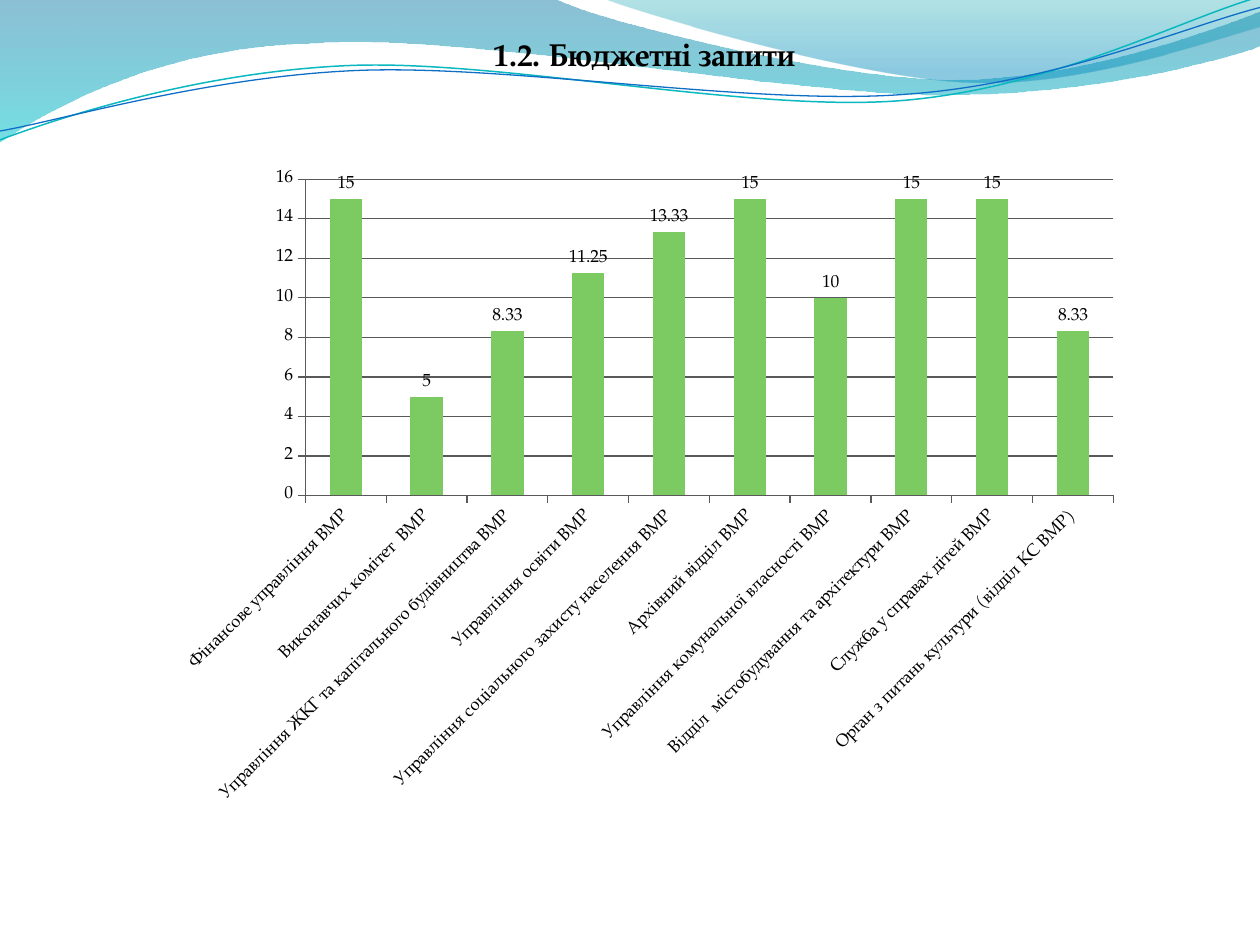
import math

from lxml import etree
from pptx import Presentation
from pptx import util as u
from pptx.chart import data as chart_data
from pptx.dml import color
from pptx.enum import chart as charts, text
from pptx.oxml import ns

FONT = "TeX Gyre Pagella"
RIBBON_TILT = 2.7

WAVES = [
    {"start": (0, 0), "stops": [(0, "0074A1", 45), (1, "00C6CF", 55)], "pieces": [
        [(4.4, -0.01)],
        [(4.76, 0.17), (6.64, 0.63), (7.58, 0.63)],
        [(8.53, 0.63), (9.58, 0.26), (10, 0.09)],
        [(10.01, 0.36)],
        [(9.83, 0.44), (8.7, 0.76), (7.46, 0.75)],
        [(6.22, 0.75), (3.82, 0.28), (2.57, 0.34)],
        [(1.29, 0.36), (0.46, 0.83), (-0.01, 1.13)],
        [(0, 0)]]},
    {"start": (4.79, -0.01), "stops": [(0, "00A1A9", 30), (0.8, "008BBF", 45)], "pieces": [
        [(5.09, 0.11), (6.82, 0.62), (7.69, 0.65)],
        [(8.56, 0.69), (9.61, 0.32), (10, 0.21)],
        [(10, 0)],
        [(4.79, -0.01)]]},
]
RIBBONS = [
    {"start": (0, 1.11), "center": (4.99, 0.58), "line": ("0AB8BF", 0.85), "pieces": [
        [(0.48, 0.93), (1.58, 0.57), (2.77, 0.52)],
        [(3.95, 0.47), (5.93, 0.89), (7.13, 0.8)],
        [(8.33, 0.71), (9.38, 0.15), (9.98, -0.02)]]},
    {"start": (0, 1.04), "center": (5, 0.59), "line": ("0F6FC6", 0.75), "pieces": [
        [(0.47, 0.96), (1.64, 0.61), (2.83, 0.56)],
        [(4.03, 0.51), (5.97, 0.84), (7.17, 0.75)],
        [(8.36, 0.67), (9.41, 0.21), (10, 0.06)]]},
]
REQUESTS = {
    "Фінансове управління ВМР": 15,
    "Виконавчих комітет  ВМР": 5,
    "Управління ЖКГ та капітального будівництва ВМР": 8.33,
    "Управління освіти ВМР": 11.25,
    "Управління соціального захисту населення ВМР": 13.33,
    "Архівний відділ ВМР": 15,
    "Управління комунальної власності ВМР": 10,
    "Відділ  містобудування та архітектури ВМР": 15,
    "Служба у справах дітей ВМР": 15,
    "Орган з питань культури (відділ КС ВМР)": 8.33,
}


def rgb(value):
    """Turn a hex string into a colour."""
    return color.RGBColor.from_string(value)


def apply(target, formats):
    """Set each format value on the target."""
    for name, value in formats.items():
        setattr(target, name, value)


def turn(point, center, degrees):
    """Turn a point clockwise about a center."""
    dx, dy = point[0] - center[0], point[1] - center[1]
    cos, sin = math.cos(math.radians(degrees)), math.sin(math.radians(degrees))
    return center[0] + dx * cos - dy * sin, center[1] + dx * sin + dy * cos


def add_outline(slide, box, start, pieces, close):
    """Draw a freeform of straight and cubic pieces measured from the box corner."""
    left, top = box[:2]
    points = [start] + [point for piece in pieces for point in piece]
    spots = [(u.Inches(left + x), u.Inches(top + y)) for x, y in points]
    builder = slide.shapes.build_freeform(*spots[0])
    builder.add_line_segments(spots[1:], close=close)
    outline = builder.convert_to_shape()
    outline.shadow.inherit = False
    segments = iter(list(outline._element.spPr.iter(ns.qn("a:lnTo"))))
    for piece in pieces:
        parts = [next(segments) for _ in piece]
        if len(parts) == 3:
            curve = etree.Element(ns.qn("a:cubicBezTo"))
            parts[0].addprevious(curve)
            for part in parts:
                curve.append(part[0])
                part.getparent().remove(part)
    return outline


def add_header(slide, box):
    """Place the two waves and the two ribbons in the box."""
    for wave in WAVES:
        shape = add_outline(slide, box, wave["start"], wave["pieces"], True)
        shape.line.fill.background()
        shape.fill.gradient()
        shape.fill.gradient_angle = 270
        for stop, (position, hue, _) in zip(shape.fill.gradient_stops, wave["stops"]):
            stop.position = position
            stop.color.rgb = rgb(hue)
        hues = shape._element.spPr.iter(ns.qn("a:srgbClr"))
        for hue, (_, _, opacity) in zip(hues, wave["stops"]):
            etree.SubElement(hue, ns.qn("a:alpha")).set("val", str(opacity * 1000))
    for ribbon in RIBBONS:
        center = ribbon["center"]
        pieces = [[turn(point, center, RIBBON_TILT) for point in piece]
                  for piece in ribbon["pieces"]]
        start = turn(ribbon["start"], center, RIBBON_TILT)
        shape = add_outline(slide, box, start, pieces, False)
        shape.rotation = 360 - RIBBON_TILT
        shape.fill.background()
        hue, width = ribbon["line"]
        shape.line.color.rgb = rgb(hue)
        shape.line.width = u.Pt(width)


def add_title(slide, box):
    """Place the centred heading in the box."""
    frame = slide.shapes.add_textbox(*map(u.Inches, box)).text_frame
    apply(frame, {"word_wrap": True, "auto_size": text.MSO_AUTO_SIZE.SHAPE_TO_FIT_TEXT})
    heading = frame.paragraphs[0]
    heading.alignment = text.PP_ALIGN.CENTER
    run = heading.add_run()
    run.text = "1.2. Бюджетні запити"
    apply(run.font, {"name": FONT, "size": u.Pt(18), "bold": True})
    run.font.color.rgb = rgb("000000")


def add_requests_chart(slide, box):
    """Place the column chart of budget requests in the box."""
    requests = chart_data.CategoryChartData()
    requests.categories = list(REQUESTS)
    requests.add_series("Series 1", list(REQUESTS.values()))
    chart = slide.shapes.add_chart(charts.XL_CHART_TYPE.COLUMN_CLUSTERED,
                                   *map(u.Inches, box), requests).chart
    apply(chart, {"has_legend": False, "has_title": False})
    apply(chart.font, {"name": FONT, "size": u.Pt(10)})
    chart.font.color.rgb = rgb("000000")

    columns = chart.plots[0]
    apply(columns, {"gap_width": 150, "vary_by_categories": False, "has_data_labels": True})
    apply(columns.data_labels, {"show_value": True, "number_format": "General",
                                "number_format_is_linked": False,
                                "position": charts.XL_LABEL_POSITION.OUTSIDE_END})
    bars = columns.series[0].format.fill
    bars.solid()
    bars.fore_color.rgb = rgb("7CCA62")

    departments, scores = chart.category_axis, chart.value_axis
    apply(scores, {"minimum_scale": 0, "maximum_scale": 16, "major_unit": 2,
                   "has_major_gridlines": True})
    departments.has_major_gridlines = False
    for axis in (departments, scores):
        axis.major_tick_mark = charts.XL_TICK_MARK.OUTSIDE
        apply(axis.tick_labels.font, {"name": FONT, "size": u.Pt(10)})
    for lines in (departments, scores, scores.major_gridlines):
        lines.format.line.color.rgb = rgb("595959")
        lines.format.line.width = u.Pt(0.75)
    departments._element.txPr.bodyPr.set("rot", "-2700000")


def main():
    """Build and save the slide."""
    deck = Presentation()
    apply(deck, {"slide_width": u.Inches(10), "slide_height": u.Inches(7.5)})
    slide = deck.slides.add_slide(deck.slide_layouts[6])
    add_header(slide, (0, 0, 10, 1.14))
    add_title(slide, (2.81, 0.23, 4.61, 0.4))
    add_requests_chart(slide, (1.33, 1.25, 7.66, 5.23))
    deck.save("out.pptx")


if __name__ == "__main__":
    main()
